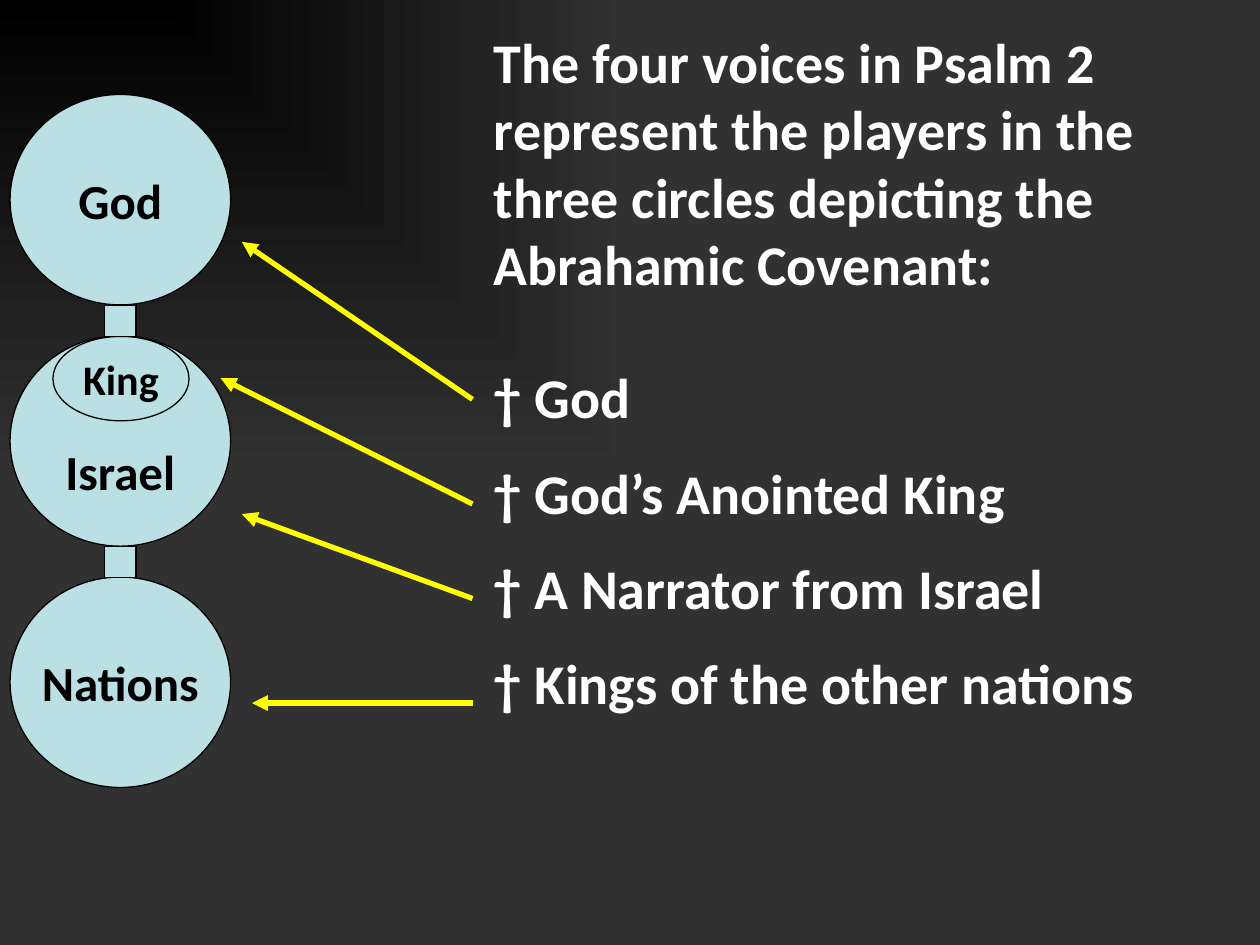
"""Builds the slide on the four voices of Psalm 2."""
from typing import Any, NamedTuple

from lxml import etree
from pptx import Presentation
from pptx import util as u
from pptx.dml import color as c
from pptx.enum import shapes as s, text as t
from pptx.oxml import ns

HUES = {"dark": "000000", "grey": "313131", "pale": "BBE0E3",
        "ink": "000000", "white": "FFFFFF", "arrow": "FFFF00"}
FRAME = {"margin_left": 0, "margin_right": 0, "margin_top": u.Inches(0.05),
         "margin_bottom": u.Inches(0.05), "word_wrap": True,
         "auto_size": t.MSO_AUTO_SIZE.NONE, "vertical_anchor": t.MSO_ANCHOR.TOP}
HEAD = ("The four voices in Psalm 2 represent the players in the "
        "three circles depicting the Abrahamic Covenant:")
VOICES = ["† God", "† God’s Anointed King", "† A Narrator from Israel",
          "† Kings of the other nations"]


class Node(NamedTuple):
    x: float
    y: float
    w: float
    h: float
    word: str = ""
    size: int = 28
    drop: float = 0.05
    kind: Any = s.MSO_SHAPE.OVAL


class Arrow(NamedTuple):
    y: float
    tip_x: float
    tip_y: float


TOP, STEP, WIDE, TALL, LINK = 0.75, 1.915, 1.75, 1.67, 0.25
RINGS = [Node(0.08, TOP + i * STEP, WIDE, TALL, word, drop=drop)
         for i, (word, drop) in enumerate([("God", 0.05), ("Israel", 0.52), ("Nations", 0.05)])]
KING = Node(0.42, 2.67, 1.08, 0.67, "King", 24)
LINKS = [Node(0.83, TOP + TALL + i * STEP, LINK, LINK, kind=s.MSO_SHAPE.RECTANGLE)
         for i in range(2)]
ARROWS = [Arrow(3.17, 1.92, 1.92), Arrow(4.75, 1.92, 4.08),
          Arrow(5.58, 2, 5.58), Arrow(4, 1.75, 3)]


def rgb(name: str) -> c.RGBColor:
    return c.RGBColor.from_string(HUES[name])


def dress(item: Any, form: dict[str, Any]) -> None:
    for key, val in form.items():
        setattr(item, key, val)


def style(para: Any, size: int, hue: str, side: Any) -> None:
    para.alignment = side
    dress(para.font, {"name": "Calibri", "size": u.Pt(size), "bold": True})
    para.font.color.rgb = rgb(hue)


def shade(slide: Any) -> None:
    fill = slide.background.fill
    fill.gradient()
    for stop, hue in zip(fill.gradient_stops, ("dark", "grey")):
        stop.color.rgb = rgb(hue)
    grad = slide.background._cSld.find(".//" + ns.qn("a:gradFill"))
    grad.remove(grad.find(ns.qn("a:lin")))
    way = etree.SubElement(grad, ns.qn("a:path"), {"path": "rect"})
    etree.SubElement(way, ns.qn("a:fillToRect"), {"r": "100000", "b": "100000"})


def write(holder: Any, top: float, high: float, lines: list[str], side: Any) -> None:
    dress(holder, {"left": u.Inches(3.92), "top": u.Inches(top),
                   "width": u.Inches(5.83), "height": u.Inches(high)})
    frame = holder.text_frame
    dress(frame, FRAME)
    frame.text = "\n".join(lines)
    for i, para in enumerate(frame.paragraphs):
        style(para, 32, "white", side)
        para.space_before = u.Pt(16 if i else 0)
        props = para._p.get_or_add_pPr()
        props.set("marL", "0")
        props.set("indent", "0")
        etree.SubElement(props, ns.qn("a:buNone"))


def draw(group: Any, node: Node) -> None:
    shape = group.shapes.add_shape(node.kind, *map(u.Inches, node[:4]))
    shape.shadow.inherit = False
    shape.fill.solid()
    shape.fill.fore_color.rgb = rgb("pale")
    shape.line.color.rgb = rgb("ink")
    shape.line.width = u.Pt(0.75)
    if node.word:
        frame = shape.text_frame
        dress(frame, {"word_wrap": False, "vertical_anchor": t.MSO_ANCHOR.MIDDLE,
                      "margin_top": u.Inches(node.drop)})
        frame.text = node.word
        style(frame.paragraphs[0], node.size, "ink", t.PP_ALIGN.CENTER)


def point(slide: Any, arrow: Arrow) -> None:
    line = slide.shapes.add_connector(
        s.MSO_CONNECTOR.STRAIGHT, *map(u.Inches, (3.75, *arrow)))
    line.line.color.rgb = rgb("arrow")
    line.line.width = u.Pt(3)
    etree.SubElement(line.line._get_or_add_ln(), ns.qn("a:tailEnd"), {"type": "triangle"})
    etree.SubElement(line._element.spPr, ns.qn("a:effectLst"))


def main() -> None:
    deck = Presentation()
    dress(deck, {"slide_width": u.Inches(10), "slide_height": u.Inches(7.5)})
    slide = deck.slides.add_slide(deck.slide_layouts[1])
    shade(slide)
    write(slide.shapes.title, 0.17, 2.25, [HEAD], t.PP_ALIGN.LEFT)
    write(slide.placeholders[1], 2.83, 3.1, VOICES, t.PP_ALIGN.JUSTIFY)
    group = slide.shapes.add_group_shape()
    for node in [*RINGS, KING, *LINKS]:
        draw(group, node)
    for arrow in ARROWS:
        point(slide, arrow)
    deck.save("out.pptx")


if __name__ == "__main__":
    main()
